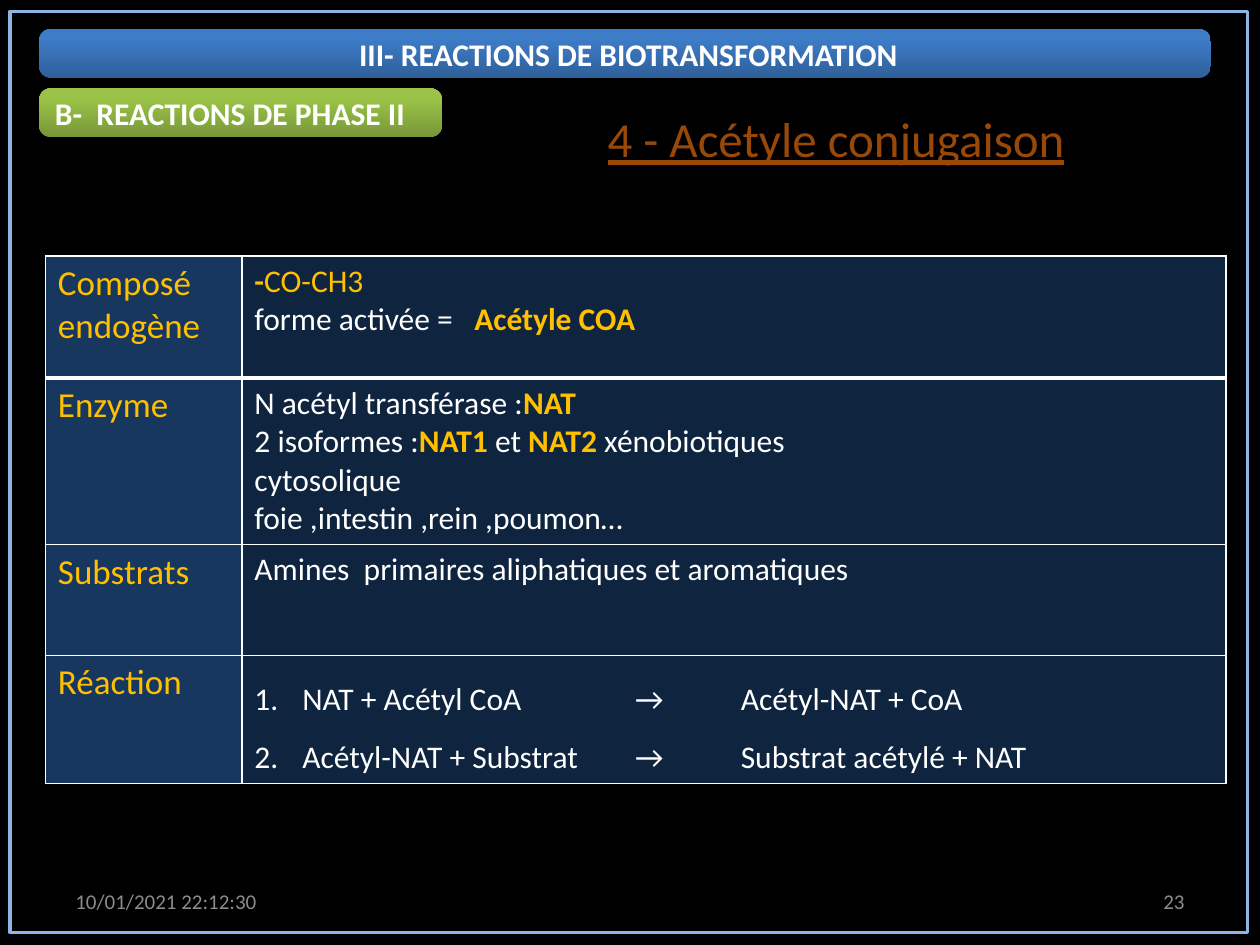
from lxml import etree
from pptx import Presentation
from pptx.dml.color import RGBColor
from pptx.enum.shapes import MSO_SHAPE
from pptx.enum.text import MSO_ANCHOR, PP_ALIGN
from pptx.oxml.ns import qn
from pptx.util import Inches, Pt

RECT, ROUND = MSO_SHAPE.RECTANGLE, MSO_SHAPE.ROUNDED_RECTANGLE
LEFT, CENTER, RIGHT = PP_ALIGN.LEFT, PP_ALIGN.CENTER, PP_ALIGN.RIGHT
MIDDLE = MSO_ANCHOR.MIDDLE
WHITE, BLACK, GOLD, GREY, BROWN = "FFFFFF", "000000", "FFC000", "8C8C8C", "984807"
FRAME, LABEL_FILL, BODY_FILL = "8EB4E3", "17375E", "0F243E"
BLUE, GREEN = ("2F5F99", "3D7CC7"), ("779737", "9BC348")

PLAIN = {"color": WHITE, "size": 18, "bold": False}
BOLD = {**PLAIN, "bold": True}
KEY = {**BOLD, "color": GOLD}
KEY_PLAIN = {**PLAIN, "color": GOLD}
LABEL = {**KEY_PLAIN, "size": 20}
TITLE = {"color": BROWN, "size": 28, "underline": True}
FOOTER = {"color": GREY, "size": 12}

COLUMNS = (1.56, 7.81)
ROW_HEIGHTS = (0.97, 1.32, 0.88, 1.02)
TAB_STOPS = (3.02, 3.86)
ROWS = [
    ("Composé endogène", [
        [("-", KEY), ("CO-CH3", KEY_PLAIN)],
        [("forme activée =   ", PLAIN), ("Acétyle COA", KEY)]]),
    ("Enzyme", [
        [("N acétyl transférase :", PLAIN), ("NAT", KEY)],
        [("2 isoformes :", PLAIN), ("NAT1", KEY), (" et ", PLAIN),
         ("NAT2", KEY), (" xénobiotiques", PLAIN)],
        [("cytosolique", PLAIN)],
        [("foie ,intestin ,rein ,poumon…", PLAIN)]]),
    ("Substrats", [[("Amines  primaires aliphatiques et aromatiques", PLAIN)]]),
    ("Réaction", [
        [("NAT + Acétyl CoA\t→\tAcétyl-NAT + CoA", PLAIN)],
        [("Acétyl-NAT + Substrat\t→\tSubstrat acétylé + NAT", PLAIN)]]),
]


def rgb(value):
    """Return the colour for a hex string."""
    return RGBColor.from_string(value)


def write(tf, paragraphs, align=LEFT):
    """Fill a text frame with paragraphs given as lists of (text, format) runs."""
    for i, runs in enumerate(paragraphs):
        p = tf.add_paragraph() if i else tf.paragraphs[0]
        p.alignment = align
        for text, fmt in runs:
            r = p.add_run()
            r.text = text
            r.font.name = "Calibri"
            for key, value in fmt.items():
                if key == "color":
                    r.font.color.rgb = rgb(value)
                else:
                    setattr(r.font, key, Pt(value) if key == "size" else value)


def add_box(s, kind, box):
    """Add a shape without shadow, fill or line."""
    sp = s.shapes.add_shape(kind, *map(Inches, box))
    sp.shadow.inherit = False
    sp.fill.background()
    sp.line.fill.background()
    sp.text_frame.word_wrap = True
    sp.text_frame.vertical_anchor = MIDDLE
    return sp


def add_frame(s, box):
    """Draw the outline around the slide."""
    sp = add_box(s, RECT, box)
    sp.line.color.rgb = rgb(FRAME)
    sp.line.width = Pt(2)


def add_banner(s, box, colors, runs, align):
    """Add a rounded heading bar with a vertical gradient."""
    sp = add_box(s, ROUND, box)
    sp.adjustments[0] = 0.25
    sp.fill.gradient()
    sp.fill.gradient_angle = 90
    for stop, color, position in zip(sp.fill.gradient_stops, colors, (0, 0.8)):
        stop.color.rgb = rgb(color)
        stop.position = position
    write(sp.text_frame, [runs], align)


def add_title(s, box, text):
    """Add the underlined section title on a black panel."""
    sp = add_box(s, RECT, box)
    sp.fill.solid()
    sp.fill.fore_color.rgb = rgb(BLACK)
    write(sp.text_frame, [[(text, TITLE)]], CENTER)


def add_footer(s, box, text, align):
    """Add one footer field."""
    tf = s.shapes.add_textbox(*map(Inches, box)).text_frame
    tf.word_wrap = True
    tf.vertical_anchor = MIDDLE
    write(tf, [[(text, FOOTER)]], align)


def style_cell(cell, fill, top, bottom):
    """Give a cell white borders and a solid fill."""
    tc_pr = cell._tc.get_or_add_tcPr()
    for side, width in zip("LRTB", (1, 1, top, bottom)):
        ln = etree.SubElement(tc_pr, qn(f"a:ln{side}"), w=str(Pt(width)))
        solid = etree.SubElement(ln, qn("a:solidFill"))
        etree.SubElement(solid, qn("a:srgbClr"), val=WHITE)
    cell.fill.solid()
    cell.fill.fore_color.rgb = rgb(fill)


def number(p):
    """Turn a paragraph into a numbered step with tab stops."""
    p.line_spacing = 1.5
    p_pr = p._p.get_or_add_pPr()
    p_pr.set("marL", str(Inches(0.38)))
    p_pr.set("indent", str(Inches(-0.38)))
    etree.SubElement(p_pr, qn("a:buFont"), typeface="+mj-lt")
    etree.SubElement(p_pr, qn("a:buAutoNum"), type="arabicPeriod")
    tabs = etree.SubElement(p_pr, qn("a:tabLst"))
    for stop in TAB_STOPS:
        etree.SubElement(tabs, qn("a:tab"), pos=str(Inches(stop)), algn="l")


def add_summary(s, left, top):
    """Add the table that sums up the conjugation reaction."""
    size = sum(COLUMNS), sum(ROW_HEIGHTS)
    table = s.shapes.add_table(len(ROWS), len(COLUMNS),
                               *map(Inches, (left, top, *size))).table
    table.first_row = table.horz_banding = False
    for column, width in zip(table.columns, COLUMNS):
        column.width = Inches(width)
    for i, (label, body) in enumerate(ROWS):
        table.rows[i].height = Inches(ROW_HEIGHTS[i])
        contents = ([[(label, LABEL)]], LABEL_FILL), (body, BODY_FILL)
        for j, (paragraphs, fill) in enumerate(contents):
            cell = table.cell(i, j)
            style_cell(cell, fill, 3 if i == 1 else 1, 3 if i == 0 else 1)
            write(cell.text_frame, paragraphs)
    for p in table.cell(len(ROWS) - 1, 1).text_frame.paragraphs:
        number(p)


def main():
    """Build the slide and save it."""
    prs = Presentation()
    prs.slide_width, prs.slide_height = Inches(10), Inches(7.5)
    s = prs.slides.add_slide(prs.slide_layouts[6])
    s.background.fill.solid()
    s.background.fill.fore_color.rgb = rgb(BLACK)
    add_frame(s, (0.08, 0.09, 9.82, 7.31))
    add_banner(s, (0.31, 0.23, 9.3, 0.39), BLUE,
               [(" ", PLAIN), ("III- REACTIONS DE BIOTRANSFORMATION", BOLD)], CENTER)
    add_banner(s, (0.31, 0.7, 3.2, 0.39), GREEN,
               [("B-  REACTIONS DE PHASE II", BOLD)], LEFT)
    add_title(s, (4.37, 0.78, 4.53, 0.63), "4 - Acétyle conjugaison")
    add_summary(s, 0.36, 2.03)
    add_footer(s, (0.5, 6.95, 2.33, 0.4), "10/01/2021 22:12:30", LEFT)
    add_footer(s, (7.17, 6.95, 2.33, 0.4), "23", RIGHT)
    prs.save("out.pptx")


if __name__ == "__main__":
    main()
